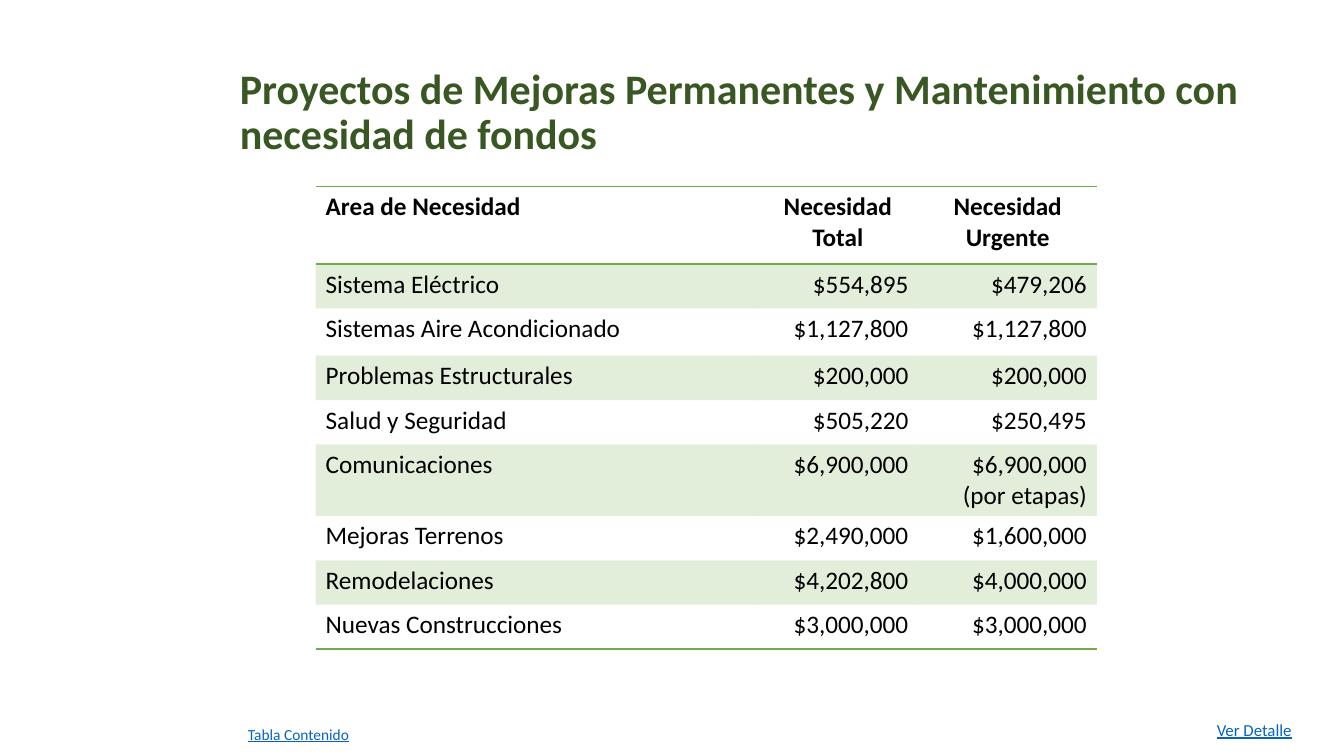
from lxml.etree import SubElement
from pptx import Presentation
from pptx.dml.color import RGBColor
from pptx.enum.text import MSO_ANCHOR, PP_ALIGN
from pptx.oxml.ns import qn
from pptx.util import Pt

TITLE = "Proyectos de Mejoras Permanentes y Mantenimiento con necesidad de fondos"
HEADER = ("Area de Necesidad", "Necesidad Total", "Necesidad Urgente")
NEEDS = [
    ("Sistema Eléctrico", "$554,895", "$479,206"),
    ("Sistemas Aire Acondicionado", "$1,127,800", "$1,127,800"),
    ("Problemas Estructurales", "$200,000", "$200,000"),
    ("Salud y Seguridad", "$505,220", "$250,495"),
    ("Comunicaciones", "$6,900,000", "$6,900,000\n(por etapas)"),
    ("Mejoras Terrenos", "$2,490,000", "$1,600,000"),
    ("Remodelaciones", "$4,202,800", "$4,000,000"),
    ("Nuevas Construcciones", "$3,000,000", "$3,000,000"),
]
LINKS = [  # text, left, top, width, height, size
    ("Ver Detalle", 1197, 709, 95, 30, 12),
    ("Tabla Contenido", 236, 714, 122, 29, 11),
]
COLUMNS = (438, 160, 177)
ROWS = (77, 44, 47, 44, 44, 71, 44, 44, 44)
GREEN, DARK_GREEN, LINK_BLUE = "70AD47", "385723", "0563C1"
NO_STYLE = "{2D5ABB26-0587-4C30-8999-92F81FD0307C}"


def px(n):
    """Convert px, 100 to the inch, to EMU."""
    return n * 9144


def rgb(color):
    return RGBColor.from_string(color)


def write(tf, text, size=18, color="000000", bold=False, underline=False,
          align=PP_ALIGN.LEFT, spacing=None):
    for i, line in enumerate(text.split("\n")):
        p = tf.add_paragraph() if i else tf.paragraphs[0]
        p.alignment = align
        p.line_spacing = spacing
        r = p.add_run()
        r.text = line
        r.font.name = "Calibri"
        r.font.size = Pt(size)
        r.font.bold = bold
        r.font.underline = underline
        r.font.color.rgb = rgb(color)


def add_text(s, text, box, wrap=False, anchor=MSO_ANCHOR.TOP, **fmt):
    tf = s.shapes.add_textbox(*map(px, box)).text_frame
    tf.word_wrap = wrap
    tf.vertical_anchor = anchor
    write(tf, text, **fmt)


def add_border(cell, side):
    ln = SubElement(cell._tc.get_or_add_tcPr(), qn(f"a:{side}"), w=str(Pt(1)))
    SubElement(SubElement(ln, qn("a:solidFill")), qn("a:srgbClr"), val=GREEN)


def shade(cell):
    """Fill with green at 20 % opacity."""
    cell.fill.solid()
    cell.fill.fore_color.rgb = rgb(GREEN)
    clr = cell._tc.tcPr.find(qn("a:solidFill")).find(qn("a:srgbClr"))
    SubElement(clr, qn("a:alpha"), val="20000")


def add_needs_table(s, left, top):
    data = [HEADER, *NEEDS]
    table = s.shapes.add_table(len(data), len(HEADER), px(left), px(top),
                               px(sum(COLUMNS)), px(sum(ROWS))).table
    table.horz_banding = False
    table._tbl.tblPr.find(qn("a:tableStyleId")).text = NO_STYLE
    for column, width in zip(table.columns, COLUMNS):
        column.width = px(width)
    for i, (row, height) in enumerate(zip(table.rows, ROWS)):
        row.height = px(height)
        number_align = PP_ALIGN.RIGHT if i else PP_ALIGN.CENTER
        for j, cell in enumerate(row.cells):
            write(cell.text_frame, data[i][j], bold=i == 0,
                  align=number_align if j else PP_ALIGN.LEFT)
            if i == 0:
                add_border(cell, "lnT")
            if i in (0, len(data) - 1):
                add_border(cell, "lnB")
            if i % 2:
                shade(cell)
            else:
                cell.fill.background()


def main():
    prs = Presentation()
    prs.slide_width, prs.slide_height = px(1333), px(750)
    s = prs.slides.add_slide(prs.slide_layouts[6])
    add_text(s, TITLE, (228, 40, 1013, 145), wrap=True, anchor=MSO_ANCHOR.MIDDLE,
             size=30, color=DARK_GREEN, bold=True, spacing=0.9)
    add_needs_table(s, 313, 185)
    for text, *box, size in LINKS:
        add_text(s, text, box, size=size, color=LINK_BLUE, underline=True)
    prs.save("out.pptx")


if __name__ == "__main__":
    main()
